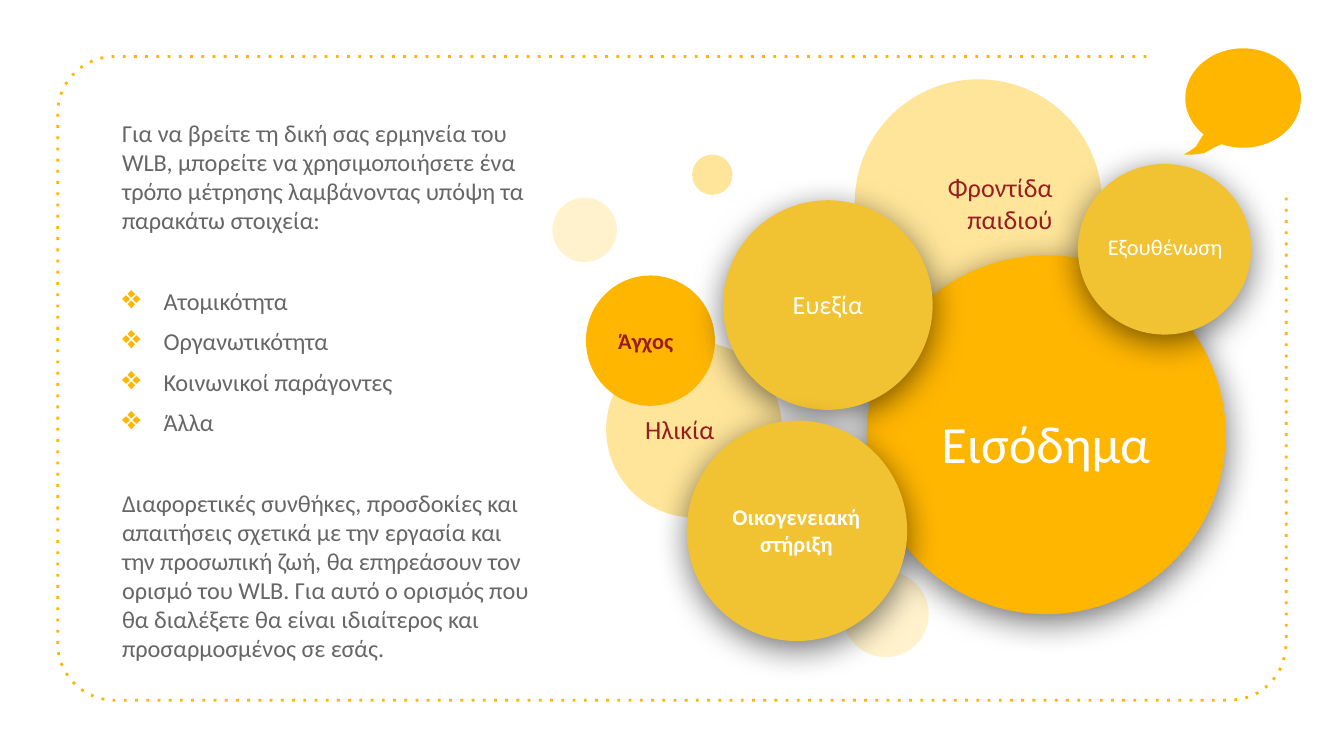
"""Build the work-life balance slide with text, circles and a speech bubble."""
from math import cos, radians, sin

from lxml.etree import SubElement
from pptx import Presentation
from pptx.dml.color import RGBColor
from pptx.enum.shapes import MSO_SHAPE
from pptx.enum.text import MSO_ANCHOR, PP_ALIGN
from pptx.oxml.ns import qn
from pptx.util import Inches, Pt

COLORS = {
    "amber": "FFB600", "gold": "F1C232", "sand": "FFE599", "cream": "FFF2CC",
    "red": "981C22", "white": "FFFFFF", "gray": "666666", "black": "000000",
}


def arc(cx, cy, rx, ry, start, end, step):
    return [(cx + rx * cos(radians(a)), cy + ry * sin(radians(a)))
            for a in range(start, end + step, step)]


def add_run(p, text, size, color, bold=False):
    r = p.add_run()
    r.text = text
    r.font.name = "Calibri"
    r.font.size = Pt(size)
    r.font.bold = bold
    r.font.color.rgb = RGBColor.from_string(COLORS[color])


prs = Presentation()
prs.slide_width = Inches(10)
prs.slide_height = Inches(10) * 9 // 16
s = prs.slides.add_slide(prs.slide_layouts[6])

frame = [(8.53, 0.42)]
frame += arc(0.85, 0.84, 0.42, 0.42, -90, -180, -10)
frame += arc(0.85, 4.79, 0.42, 0.42, 180, 90, -10)
frame += arc(9.15, 4.79, 0.42, 0.42, 90, 0, -10)
frame += [(9.57, 1.46)]
frame = [(Inches(x), Inches(y)) for x, y in frame]
bubble = arc(9.25, 0.73, 0.43, 0.37, 133, 472, 3)
bubble += [(9.03, 1.1), (8.96, 1.14), (8.88, 1.15), (8.81, 1.15),
           (8.86, 1.12), (8.9, 1.09), (8.93, 1.04)]
bubble = [(Inches(x), Inches(y)) for x, y in bubble]

builder = s.shapes.build_freeform(*frame[0])
builder.add_line_segments(frame[1:], close=False)
sp = builder.convert_to_shape()
sp.shadow.inherit = False
sp.fill.background()
sp.line.color.rgb = RGBColor.from_string(COLORS["amber"])
sp.line.width = Pt(1.5)
SubElement(sp._element.spPr.find(qn("a:ln")), qn("a:prstDash"), val="dot")

ELLIPSE, RECT = MSO_SHAPE.OVAL, MSO_SHAPE.RECTANGLE
LEFT, CENTER, RIGHT = PP_ALIGN.LEFT, PP_ALIGN.CENTER, PP_ALIGN.RIGHT
items = [
    (ELLIPSE, 6.27, 4.25, 0.64, 0.64, "cream", False, None),
    (ELLIPSE, 4.11, 1.47, 0.48, 0.48, "cream", False, None),
    (ELLIPSE, 4.51, 2.54, 1.31, 1.31, "sand", False, ("Ηλικία", 14, "red", False, LEFT)),
    (ELLIPSE, 6.36, 0.59, 1.84, 1.84, "sand", False, ("Φροντίδα παιδιού", 14, "red", False, RIGHT)),
    (ELLIPSE, 4.36, 2.05, 0.96, 0.97, "amber", False, ("Άγχος", 12, "red", True, LEFT)),
    (ELLIPSE, 5.15, 1.15, 0.3, 0.3, "sand", False, None),
    (ELLIPSE, 6.45, 1.9, 2.67, 2.67, "amber", True, None),
    (RECT, 6.76, 2.66, 2.04, 1.27, "amber", False, ("Εισόδημα", 28, "white", False, CENTER)),
    (ELLIPSE, 5.38, 1.49, 1.56, 1.56, "gold", True, None),
    (None, 5.63, 1.75, 1.06, 1.03, None, False, ("Ευεξία", 14, "white", False, CENTER)),
    (ELLIPSE, 5.11, 3.13, 1.64, 1.64, "gold", True, None),
    (None, 5.34, 3.43, 1.17, 1.03, None, False, ("Οικογενειακή στήριξη", 12, "white", True, CENTER)),
    (ELLIPSE, 8.02, 1.22, 1.29, 1.27, "gold", True, None),
    (None, 8.14, 1.37, 1.06, 0.93, None, False, ("Εξουθένωση", 12, "white", False, CENTER)),
]
for kind, x, y, w, h, fill, shadow, label in items:
    box = Inches(x), Inches(y), Inches(w), Inches(h)
    if kind is None:
        sp = s.shapes.add_textbox(*box)
    else:
        sp = s.shapes.add_shape(kind, *box)
        sp.shadow.inherit = False
        sp.fill.solid()
        sp.fill.fore_color.rgb = RGBColor.from_string(COLORS[fill])
        sp.line.fill.background()
    if shadow:
        effects = sp._element.spPr.find(qn("a:effectLst"))
        outer = SubElement(effects, qn("a:outerShdw"), blurRad=str(Pt(18)),
                           dist=str(Pt(4)), dir="5400000", algn="bl", rotWithShape="0")
        color = SubElement(outer, qn("a:srgbClr"), val=COLORS["black"])
        SubElement(color, qn("a:alpha"), val="55000")
    if label:
        text, size, color, bold, align = label
        tf = sp.text_frame
        tf.word_wrap = True
        tf.vertical_anchor = MSO_ANCHOR.MIDDLE
        tf.margin_left = tf.margin_right = tf.margin_top = tf.margin_bottom = Inches(0.1)
        p = tf.paragraphs[0]
        p.alignment = align
        add_run(p, text, size, color, bold)

paragraphs = [
    ("Για να βρείτε τη δική σας ερμηνεία του WLB, μπορείτε να χρησιμοποιήσετε ένα "
     "τρόπο μέτρησης λαμβάνοντας υπόψη τα παρακάτω στοιχεία:", 6, False),
    ("Ατομικότητα", 27.5, True),
    ("Οργανωτικότητα", 6, True),
    ("Κοινωνικοί παράγοντες", 6, True),
    ("Άλλα", 6, True),
    ("Διαφορετικές συνθήκες, προσδοκίες και απαιτήσεις σχετικά με την εργασία και "
     "την προσωπική ζωή, θα επηρεάσουν τον ορισμό του WLB. Για αυτό ο ορισμός που "
     "θα διαλέξετε θα είναι ιδιαίτερος και προσαρμοσμένος σε εσάς.", 27.5, False),
]
tf = s.shapes.add_textbox(Inches(0.81), Inches(0.78), Inches(3.26), Inches(4.53)).text_frame
tf.word_wrap = True
tf.margin_left = tf.margin_right = tf.margin_top = tf.margin_bottom = Inches(0.1)
for i, (text, gap, bullet) in enumerate(paragraphs):
    p = tf.add_paragraph() if i else tf.paragraphs[0]
    p.space_before = Pt(gap)
    add_run(p, text, 13, "gray")
    if bullet:
        pPr = p._p.get_or_add_pPr()
        pPr.set("marL", str(Inches(0.31)))
        pPr.set("indent", str(-Inches(0.31)))
        SubElement(SubElement(pPr, qn("a:buClr")), qn("a:srgbClr"), val=COLORS["amber"])
        SubElement(pPr, qn("a:buSzPct"), val="135000")
        SubElement(pPr, qn("a:buChar"), char="❖")

builder = s.shapes.build_freeform(*bubble[0])
builder.add_line_segments(bubble[1:], close=True)
sp = builder.convert_to_shape()
sp.shadow.inherit = False
sp.fill.solid()
sp.fill.fore_color.rgb = RGBColor.from_string(COLORS["amber"])
sp.line.fill.background()

prs.save("out.pptx")
